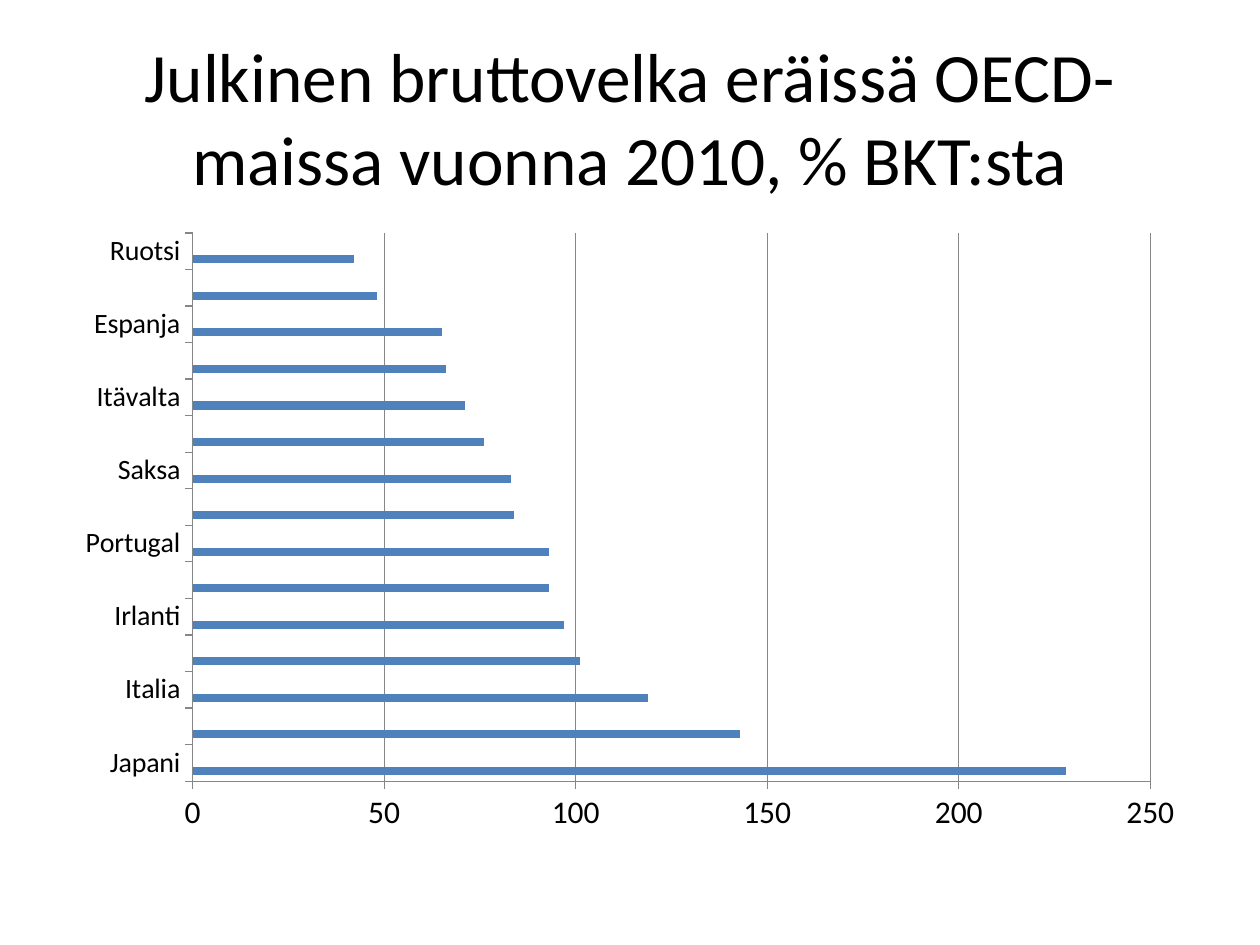
from pptx import Presentation
from pptx.chart.data import CategoryChartData
from pptx.dml.color import RGBColor
from pptx.enum import chart as ch, text as tx
from pptx.util import Pt


def paint(fill, color):
    fill.solid()
    fill.fore_color.rgb = RGBColor.from_string(color)


def write(shape, words, size=18, color="000000", font="Calibri",
          align=tx.PP_ALIGN.CENTER):
    frame = shape.text_frame
    frame.text = words
    frame.word_wrap = True
    frame.auto_size = tx.MSO_AUTO_SIZE.NONE
    frame.vertical_anchor = tx.MSO_ANCHOR.MIDDLE
    para = frame.paragraphs[0]
    para.alignment = align
    run = para.runs[0].font
    run.size, run.name = Pt(size), font
    paint(run.fill, color)


prs = Presentation()
prs.slide_width, prs.slide_height = Pt(720), Pt(540)
slide = prs.slides.add_slide(prs.slide_layouts[5])
paint(slide.background.fill, "FFFFFF")

title = slide.shapes.title
title.left, title.top, title.width, title.height = Pt(36), Pt(21.6), Pt(648), Pt(90)
write(title, "Julkinen bruttovelka eräissä OECD-maissa vuonna 2010, % BKT:sta",
      size=39.6)

debt = {
    "Japani": 228, "Kreikka": 143, "Italia": 119, "Belgia": 101, "Irlanti": 97,
    "USA": 93, "Portugal": 93, "Ranska": 84, "Saksa": 83, "UK": 76,
    "Itävalta": 71, "Hollanti": 66, "Espanja": 65, "Suomi": 48, "Ruotsi": 42,
}
data = CategoryChartData()
data.categories = list(debt)
data.add_series("Series 1", list(debt.values()))
# Two empty series share each cluster and keep the bars thin.
for name in ("Series 2", "Series 3"):
    data.add_series(name, [None] * len(debt))

chart = slide.shapes.add_chart(ch.XL_CHART_TYPE.BAR_CLUSTERED, Pt(36), Pt(126),
                               Pt(648), Pt(356.4), data).chart
chart.has_title = False
chart.has_legend = False
chart.font.name, chart.font.size = "Calibri", Pt(18)
paint(chart.font.fill, "000000")

plot = chart.plots[0]
plot.gap_width = 150
plot.overlap = 0
plot.vary_by_categories = False
for bars, color in zip(plot.series, ("4F81BD", "C0504D", "9BBB59")):
    paint(bars.format.fill, color)

cats, vals = chart.category_axis, chart.value_axis
cats.tick_labels.font.size = Pt(16)
cats.has_major_gridlines = False
vals.has_major_gridlines = True
vals.minimum_scale, vals.maximum_scale, vals.major_unit = 0, 250, 50
for axis in (cats, vals):
    axis.major_tick_mark = ch.XL_TICK_MARK.OUTSIDE
    axis.minor_tick_mark = ch.XL_TICK_MARK.NONE
for line in (cats.format.line, vals.format.line, vals.major_gridlines.format.line):
    line.width = Pt(0.75)
    paint(line.fill, "868686")

prs.save("out.pptx")
